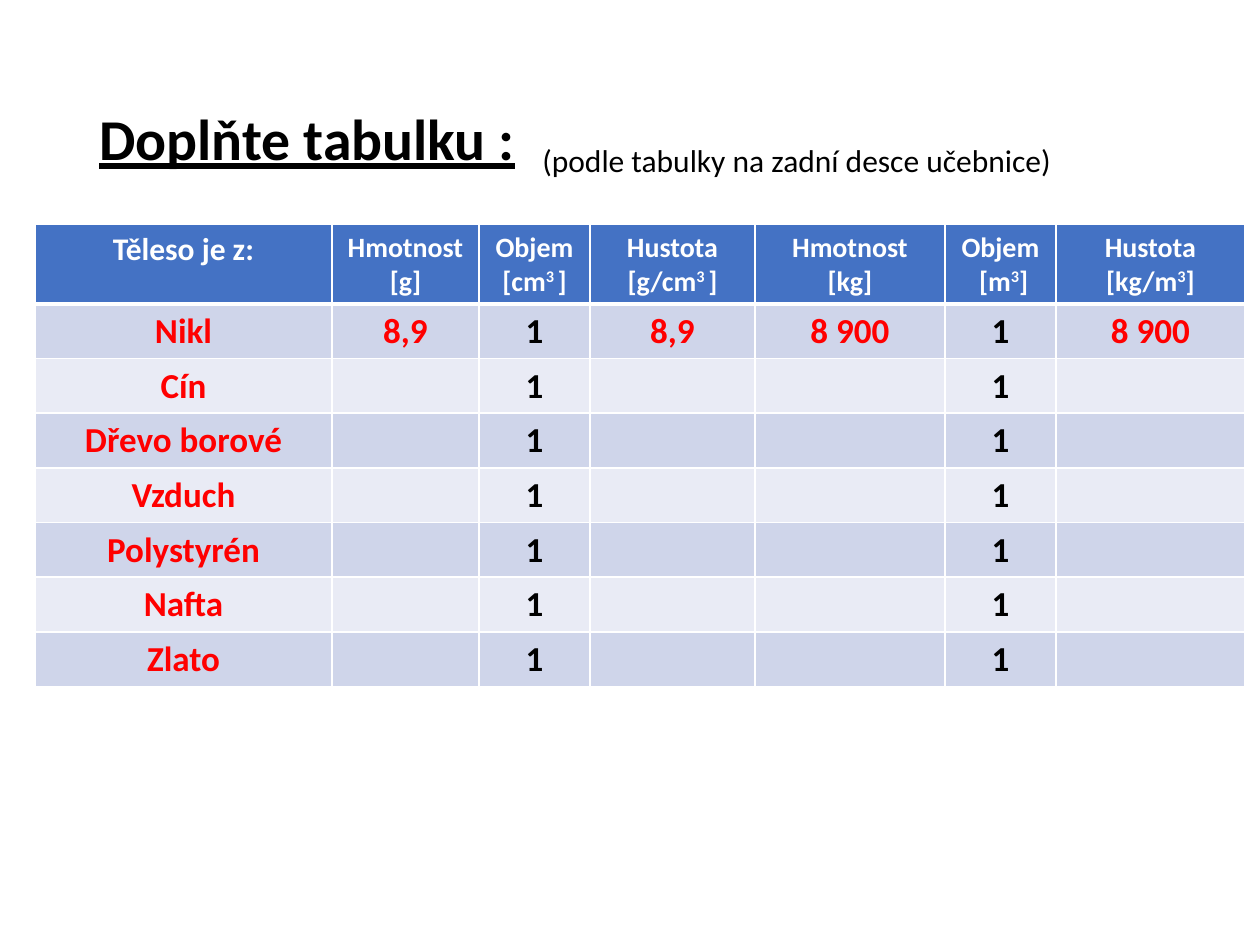
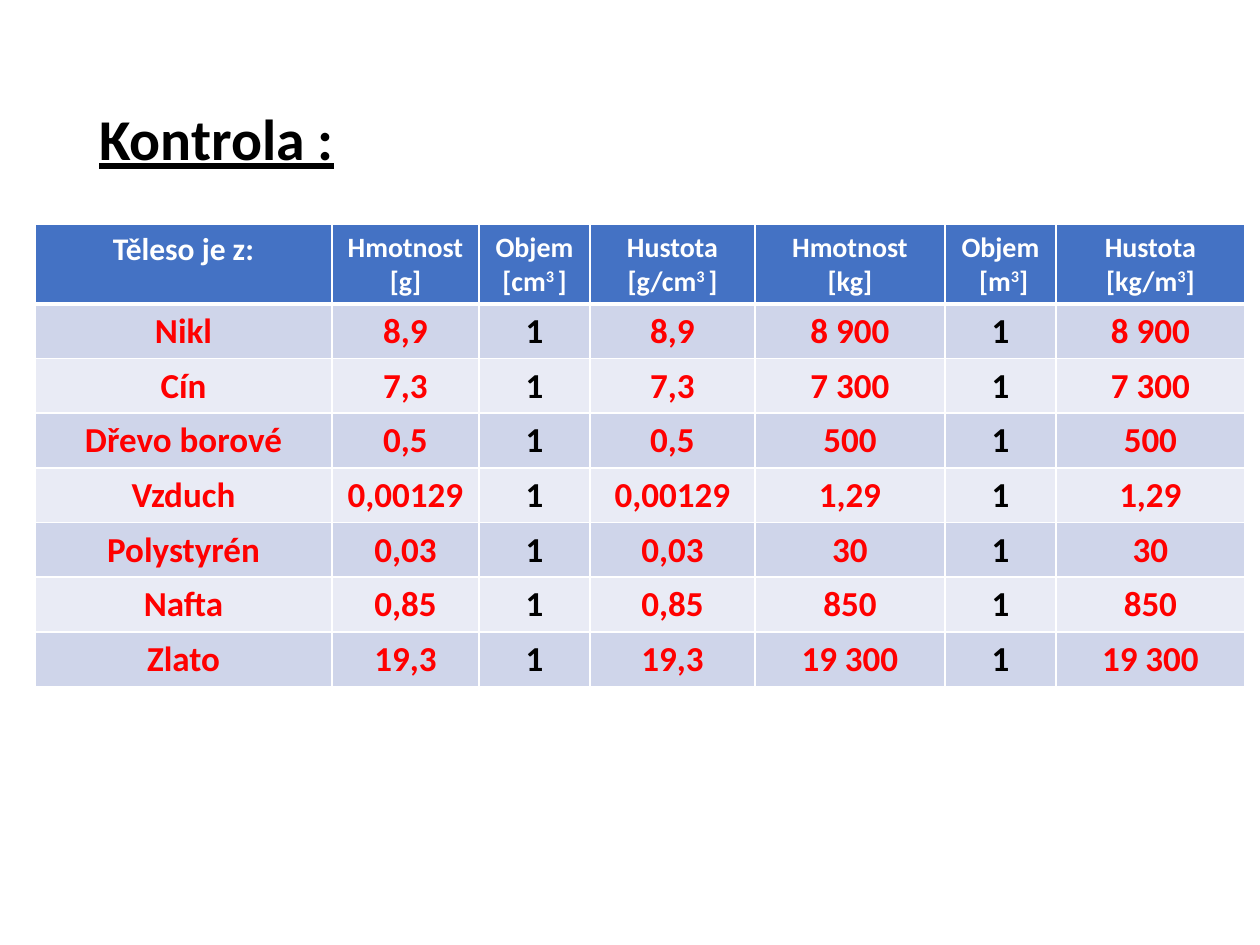
import pptx
import pptx.util
import pptx.dml.color
import pptx.enum.text
import pptx.oxml
import pptx.oxml.ns

PX = 914400 / 126
FONT = "Calibri"
COLORS = {
    "black": "000000",
    "white": "FFFFFF",
    "red": "FF0000",
    "header": "4472C4",
    "odd": "CFD5EA",
    "even": "E9EBF5",
}
TITLE_BOX = (87, 50, 1086, 183)
NOTE_BOX = (530, 135, 539, 50)
TABLE_BOX = (35, 224, 1210, 462)
COL_WIDTHS = [297, 147, 111, 165, 190, 111, 189]
ROW_HEIGHT = 52
VOLUME_COLS = (2, 5)
HEADERS = [
    "Těleso je z:",
    "Hmotnost [g]",
    "Objem [cm^3 ^]",
    "Hustota [g/cm^3 ^]",
    "Hmotnost [kg]",
    "Objem\n [m^3^]",
    "Hustota\n[kg/m^3^]",
]
MATERIALS = [
    ("Nikl", "8,9", "8 900"),
    ("Cín", "7,3", "7 300"),
    ("Dřevo borové", "0,5", "500"),
    ("Vzduch", "0,00129", "1,29"),
    ("Polystyrén", "0,03", "30"),
    ("Nafta", "0,85", "850"),
    ("Zlato", "19,3", "19 300"),
]


def px(n):
    return pptx.util.Emu(round(n * PX))


def rgb(name):
    return pptx.dml.color.RGBColor.from_string(COLORS[name])


def style_run(r, size, color, bold=False, underline=False):
    r.font.name = FONT
    r.font.size = pptx.util.Pt(size)
    r.font.bold = bold
    r.font.underline = underline
    r.font.color.rgb = rgb(color)


def add_text(s, box, text, size, wrap=True, **style):
    tf = s.shapes.add_textbox(*map(px, box)).text_frame
    tf.text = text
    tf.word_wrap = wrap
    style_run(tf.paragraphs[0].runs[0], size, "black", **style)
    return tf


def add_title(s, box, text):
    tf = add_text(s, box, text, 33, bold=True, underline=True)
    tf.vertical_anchor = pptx.enum.text.MSO_ANCHOR.MIDDLE
    tf.paragraphs[0].line_spacing = 0.9


def add_note(s, box, text):
    tf = add_text(s, box, text, 18, wrap=False)
    tf.auto_size = pptx.enum.text.MSO_AUTO_SIZE.SHAPE_TO_FIT_TEXT


def set_borders(cell, top, bottom):
    tcPr = cell._tc.get_or_add_tcPr()
    widths = {"lnL": 1, "lnR": 1, "lnT": top, "lnB": bottom}
    for i, (side, width) in enumerate(widths.items()):
        tcPr.insert(i, pptx.oxml.parse_xml(
            f'<a:{side} {pptx.oxml.ns.nsdecls("a")} w="{pptx.util.Pt(width)}">'
            f'<a:solidFill><a:srgbClr val="{COLORS["white"]}"/></a:solidFill>'
            f'</a:{side}>'))


def write_cell(cell, text, size, color):
    tf = cell.text_frame
    for i, line in enumerate(text.split("\n")):
        p = tf.add_paragraph() if i else tf.paragraphs[0]
        p.alignment = pptx.enum.text.PP_ALIGN.CENTER
        for j, part in enumerate(line.split("^")):
            if part:
                r = p.add_run()
                r.text = part
                style_run(r, size, color, bold=True)
                if j % 2:
                    r._r.get_or_add_rPr().set("baseline", "30000")


def add_density_table(s, box, solved):
    rows = [HEADERS]
    for i, (name, small, large) in enumerate(MATERIALS):
        if i >= solved:
            small = large = ""
        rows.append([name, small, "1", small, large, "1", large])
    frame = s.shapes.add_table(len(rows), len(HEADERS), *map(px, box))
    table = frame.table
    for column, width in zip(table.columns, COL_WIDTHS):
        column.width = px(width)
    for i, values in enumerate(rows):
        table.rows[i].height = px(ROW_HEIGHT)
        fill = "header" if i == 0 else "odd" if i % 2 else "even"
        for j, text in enumerate(values):
            cell = table.cell(i, j)
            cell.fill.solid()
            cell.fill.fore_color.rgb = rgb(fill)
            set_borders(cell, 3 if i == 1 else 1, 3 if i == 0 else 1)
            if i == 0:
                write_cell(cell, text, 16 if j else 18, "white")
            else:
                write_cell(cell, text, 20, "black" if j in VOLUME_COLS else "red")
    frame.height = px(box[3])


def add_density_slide(prs, title, solved, note=None):
    s = prs.slides.add_slide(prs.slide_layouts[6])
    s.background.fill.solid()
    s.background.fill.fore_color.rgb = rgb("white")
    add_title(s, TITLE_BOX, title)
    add_density_table(s, TABLE_BOX, solved)
    if note:
        add_note(s, NOTE_BOX, note)


def main():
    prs = pptx.Presentation()
    prs.slide_width = px(1260)
    prs.slide_height = px(945)
    add_density_slide(prs, "Doplňte tabulku :", 1,
                      "(podle tabulky na zadní desce učebnice)")
    add_density_slide(prs, "Kontrola :", len(MATERIALS))
    prs.save("out.pptx")


if __name__ == "__main__":
    main()
